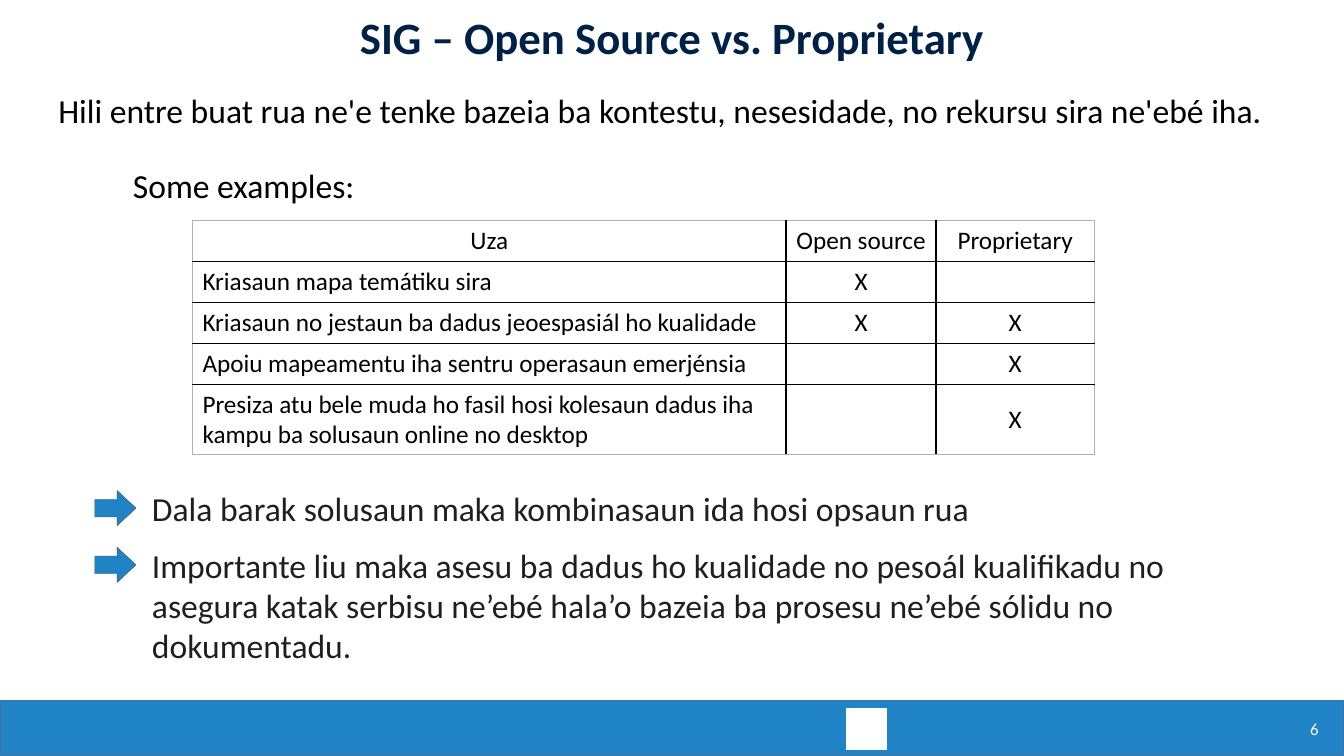
from lxml import etree
from pptx import Presentation
from pptx import util as u
from pptx.dml.color import RGBColor
from pptx.enum import shapes, text
from pptx.oxml.ns import qn

Cm = u.Cm
COLORS = {
    "blue": "1F83C5", "band_line": "43739E", "arrow_line": "4D4D4D",
    "navy": "002147", "black": "000000", "dark": "1F1F1F",
    "white": "FFFFFF", "frame": "B2B2B2",
}
HEADER = ["Uza", "Open source", "Proprietary"]
USES = [
    ["Kriasaun mapa temátiku sira", "X", ""],
    ["Kriasaun no jestaun ba dadus jeoespasiál ho kualidade", "X", "X"],
    ["Apoiu mapeamentu iha sentru operasaun emerjénsia", "", "X"],
    ["Presiza atu bele muda ho fasil hosi kolesaun dadus iha kampu "
     "ba solusaun online no desktop", "", "X"],
]
TAKEAWAYS = [
    (12.17, 22.86, 1.27, "Dala barak solusaun maka kombinasaun ida hosi opsaun rua"),
    (13.6, 28.85, 3.33, "Importante liu maka asesu ba dadus ho kualidade no pesoál "
     "kualifikadu no asegura katak serbisu ne’ebé hala’o bazeia ba prosesu "
     "ne’ebé sólidu no dokumentadu."),
]


def rgb(name):
    return RGBColor.from_string(COLORS[name])


def set_font(p, size, color, bold=False):
    p.font.name = "Calibri"
    p.font.size = u.Pt(size)
    p.font.bold = bold
    p.font.color.rgb = rgb(color)


def add_shape(s, kind, x, y, w, h, fill, line, width):
    sp = s.shapes.add_shape(kind, Cm(x), Cm(y), Cm(w), Cm(h))
    sp.shadow.inherit = False
    sp.fill.solid()
    sp.fill.fore_color.rgb = rgb(fill)
    sp.line.color.rgb = rgb(line)
    sp.line.width = u.Pt(width)
    return sp


def add_text(s, x, y, w, h, words, size=24, color="black"):
    tf = s.shapes.add_textbox(Cm(x), Cm(y), Cm(w), Cm(h)).text_frame
    tf.word_wrap = True
    p = tf.paragraphs[0]
    p.text = words
    set_font(p, size, color)


def add_title(s, x, y, w, h, words):
    title = s.shapes.title
    title.left, title.top, title.width, title.height = Cm(x), Cm(y), Cm(w), Cm(h)
    tf = title.text_frame
    tf.vertical_anchor = text.MSO_ANCHOR.MIDDLE
    p = tf.paragraphs[0]
    p.text = words
    p.alignment = text.PP_ALIGN.CENTER
    p.line_spacing = 0.9
    set_font(p, 32, "navy", bold=True)


def add_footer(s, x, y, w, h, number):
    rect = shapes.MSO_SHAPE.RECTANGLE
    add_shape(s, rect, x, y, w, h, "blue", "band_line", 1)
    add_shape(s, rect, x + 21.34, y + 0.2, 1, 1.04, "white", "white", 1)
    add_text(s, x + w - 1.1, y + 0.33, 1.1, 0.79, number, 12, "white")


def set_borders(cell, colors):
    """Draw the cell's sides; colors maps L, R, T and B to colour names."""
    tcPr = cell._tc.get_or_add_tcPr()
    for side, color in colors.items():
        ln = etree.SubElement(tcPr, qn(f"a:ln{side}"), w=str(u.Pt(1)))
        fill = etree.SubElement(ln, qn("a:solidFill"))
        etree.SubElement(fill, qn("a:srgbClr"), val=COLORS[color])


def add_uses_table(s, x, y, widths, heights):
    rows = [HEADER] + USES
    last_row, last_col = len(rows) - 1, len(HEADER) - 1
    table = s.shapes.add_table(len(rows), len(HEADER), Cm(x), Cm(y),
                               Cm(sum(widths)), Cm(sum(heights))).table
    table.first_row = table.horz_banding = False
    for col, width in zip(table.columns, widths):
        col.width = Cm(width)
    for i, (row, height) in enumerate(zip(rows, heights)):
        table.rows[i].height = Cm(height)
        for j, words in enumerate(row):
            cell = table.cell(i, j)
            outer = {"L": j == 0, "R": j == last_col, "T": i == 0, "B": i == last_row}
            set_borders(cell, {side: "frame" if edge else "black"
                               for side, edge in outer.items()})
            cell.fill.background()
            p = cell.text_frame.paragraphs[0]
            p.text = words
            set_font(p, 18, "black")
            if i == 0 or j > 0:
                cell.vertical_anchor = text.MSO_ANCHOR.MIDDLE
                p.alignment = text.PP_ALIGN.CENTER


def add_takeaway(s, x, y, w, h, words):
    """Place an arrow with its statement to the right."""
    arrow = add_shape(s, shapes.MSO_SHAPE.RIGHT_ARROW, x, y + 0.19, 1.04, 0.89,
                      "blue", "arrow_line", 0.25)
    arrow.adjustments[1] = 0.536
    add_text(s, x + 1.19, y, w, h, words, color="dark")


def main():
    prs = Presentation()
    prs.slide_width, prs.slide_height = Cm(33.87), Cm(19.05)
    s = prs.slides.add_slide(prs.slide_layouts[5])
    add_footer(s, 0, 17.65, 33.87, 1.4, "6")
    add_title(s, 0, 0.05, 33.87, 1.93, "SIG – Open Source vs. Proprietary")
    add_text(s, 1.22, 2.13, 30.94, 1.27, "Hili entre buat rua ne'e tenke bazeia ba "
             "kontestu, nesesidade, no rekursu sira ne'ebé iha.")
    add_text(s, 3.1, 4.04, 8, 1.27, "Some examples:")
    add_uses_table(s, 4.85, 5.56, [14.96, 3.78, 3.99], [1.03] * 4 + [1.78])
    for y, w, h, words in TAKEAWAYS:
        add_takeaway(s, 2.39, y, w, h, words)
    prs.save("out.pptx")


if __name__ == "__main__":
    main()
